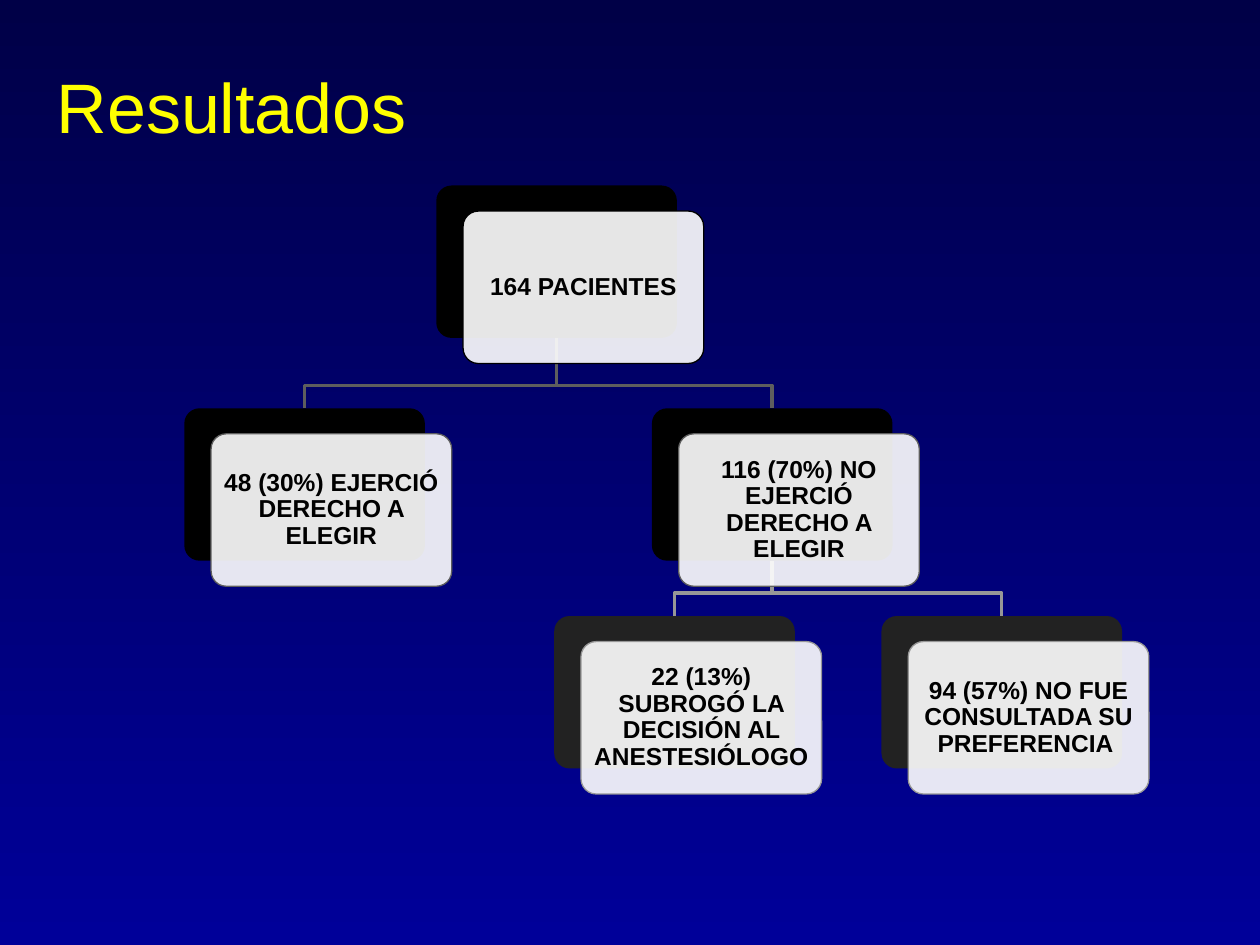
from dataclasses import dataclass
from typing import Optional

from lxml.etree import SubElement
from pptx import Presentation
from pptx.dml.color import RGBColor
from pptx.enum.shapes import MSO_SHAPE
from pptx.enum.text import MSO_ANCHOR, PP_ALIGN
from pptx.oxml.ns import qn
from pptx.util import Pt

BOX_W, BOX_H = 137.5, 87.1
SHIFT_X, SHIFT_Y = 15.3, 14.6  # front card relative to its back card
BEND = 13  # height of a link's bend above the child
ROW_TOPS = (106, 233.3, 352)
BACK_FILLS = ("000000", "000000", "222222")
LINE_COLORS = ("000000", "5E5E5E", "979797")


@dataclass(frozen=True)
class Node:
    text: str
    left: float
    level: int
    parent: Optional["Node"] = None

    @property
    def top(self) -> float:
        return ROW_TOPS[self.level]

    @property
    def center(self) -> float:
        return self.left + BOX_W / 2


def rgb(color: str) -> RGBColor:
    return RGBColor.from_string(color)


def write(tf, text: str, align: PP_ALIGN, spacing: float, **font_values) -> None:
    tf.word_wrap = True
    tf.vertical_anchor = MSO_ANCHOR.MIDDLE
    p = tf.paragraphs[0]
    p.alignment = align
    p.line_spacing = spacing
    r = p.add_run()
    r.text = text
    color = font_values.pop("color")
    for name, value in {"name": "Arial", **font_values}.items():
        setattr(r.font, name, value)
    r.font.color.rgb = rgb(color)


def add_link(s, child: Node) -> None:
    """Draw the elbow line from the parent's back card to the child's."""
    parent = child.parent
    bend_y = child.top - BEND
    builder = s.shapes.build_freeform(Pt(parent.center), Pt(parent.top + BOX_H))
    corners = ((parent.center, bend_y), (child.center, bend_y), (child.center, child.top))
    builder.add_line_segments([(Pt(x), Pt(y)) for x, y in corners], close=False)
    sp = builder.convert_to_shape()
    sp.shadow.inherit = False
    sp.fill.background()
    sp.line.color.rgb = rgb(LINE_COLORS[child.level])
    sp.line.width = Pt(2)


def add_card(s, left: float, top: float, fill: str):
    sp = s.shapes.add_shape(
        MSO_SHAPE.ROUNDED_RECTANGLE, Pt(left), Pt(top), Pt(BOX_W), Pt(BOX_H)
    )
    sp.adjustments[0] = 0.1
    sp.shadow.inherit = False
    sp.fill.solid()
    sp.fill.fore_color.rgb = rgb(fill)
    sp.line.fill.background()
    return sp


def add_node(s, node: Node) -> None:
    add_card(s, node.left, node.top, BACK_FILLS[node.level])
    front = add_card(s, node.left + SHIFT_X, node.top + SHIFT_Y, "FFFFFF")
    fill_color = front.fill._xPr.find(qn("a:solidFill"))[0]
    SubElement(fill_color, qn("a:alpha"), val="90000")
    front.line.color.rgb = rgb(LINE_COLORS[node.level])
    front.line.width = Pt(0.75)
    tf = front.text_frame
    for side in ("left", "top", "right", "bottom"):
        setattr(tf, f"margin_{side}", Pt(4))
    write(tf, node.text, PP_ALIGN.CENTER, 0.9, size=Pt(14), bold=True, color="000000")


def add_background(s) -> None:
    fill = s.background.fill
    fill.gradient()
    fill.gradient_angle = 270
    for stop, color in zip(fill.gradient_stops, ("000047", "000099")):
        stop.color.rgb = rgb(color)


def add_title(s, text: str) -> None:
    title = s.shapes.title
    box = {"left": 25.2, "top": 15.1, "width": 648, "height": 90}
    for name, value in box.items():
        setattr(title, name, Pt(value))
    write(title.text_frame, text, PP_ALIGN.LEFT, 1.0, size=Pt(40), color="FFFF00")


def main() -> None:
    prs = Presentation()
    prs.slide_width, prs.slide_height = Pt(720), Pt(540)
    s = prs.slides.add_slide(prs.slide_layouts[5])
    add_background(s)
    add_title(s, "Resultados")

    patients = Node("164 PACIENTES", 249.3, 0)
    chose = Node("48 (30%) EJERCIÓ DERECHO A ELEGIR", 105.3, 1, patients)
    not_chose = Node("116 (70%) NO EJERCIÓ DERECHO A ELEGIR", 372.5, 1, patients)
    delegated = Node("22 (13%) SUBROGÓ LA DECISIÓN AL ANESTESIÓLOGO", 316.7, 2, not_chose)
    not_asked = Node("94 (57%) NO FUE CONSULTADA SU PREFERENCIA ", 503.7, 2, not_chose)
    nodes = (patients, chose, not_chose, delegated, not_asked)

    for node in nodes:
        if node.parent:
            add_link(s, node)
    for node in nodes:
        add_node(s, node)
    prs.save("out.pptx")


if __name__ == "__main__":
    main()
